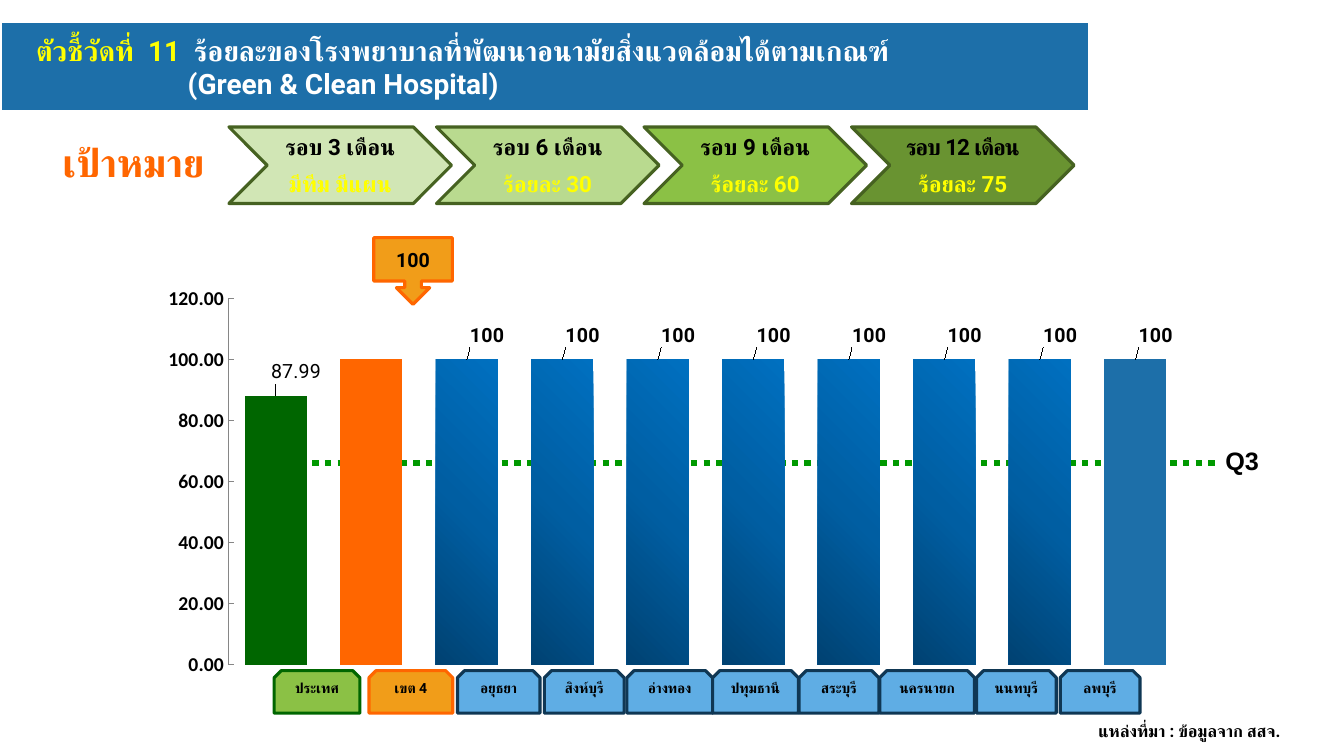
from dataclasses import dataclass

from lxml import etree
from pptx import Presentation
from pptx import util as u
from pptx.chart import data
from pptx.dml.color import RGBColor
from pptx.enum import chart as ch, dml, shapes, text
from pptx.oxml import parse_xml
from pptx.oxml.ns import nsdecls, qn

KIND = shapes.MSO_SHAPE
ALIGN = text.PP_ALIGN
ANCHOR = text.MSO_ANCHOR


@dataclass(frozen=True)
class Theme:
    font: str = "Roboto"
    plain: str = "Arial"
    axis: str = "Calibri"
    black: str = "000000"
    white: str = "FFFFFF"
    yellow: str = "FFFF00"
    blue: str = "1D6FA9"
    sky: str = "5FADE4"
    navy: str = "0F3754"
    green: str = "006600"
    dots: str = "009900"
    leaf: str = "8BC145"
    moss: str = "466221"
    orange: str = "FF6600"
    amber: str = "F19D19"
    brown: str = "7D5008"
    grey: str = "868686"
    steps: tuple = ("D1E6B5", "B9DA8F", "8BC145", "699331")
    grad: tuple = ("004272", "005EA2", "0070C0")
    goal: int = 28
    head: int = 20
    mark: int = 18
    step: int = 16
    label: int = 14
    note: int = 12
    tag: int = 10


def rgb(code):
    return RGBColor.from_string(code)


def layout(x, y, extra=""):
    """Manual chart layout; extra holds elements placed before x."""
    return parse_xml(
        f'<c:layout {nsdecls("c")}><c:manualLayout>{extra}'
        f'<c:x val="{x}"/><c:y val="{y}"/></c:manualLayout></c:layout>')


class Board:
    def __init__(self, slide, theme):
        self.slide, self.theme = slide, theme

    def font(self, font, size, color, bold=True, name=None):
        font.size, font.bold = u.Pt(size), bold
        font.name = name or self.theme.font
        font.color.rgb = rgb(color)

    def fill_text(self, shape, rows, size, align=ALIGN.CENTER,
                  anchor=ANCHOR.MIDDLE, wrap=True, name=None):
        """Each row is a list of (text, colour) runs."""
        frame = shape.text_frame
        frame.word_wrap, frame.vertical_anchor = wrap, anchor
        for i, row in enumerate(rows):
            para = frame.add_paragraph() if i else frame.paragraphs[0]
            para.alignment = align
            for words, color in row:
                run = para.add_run()
                run.text = words
                self.font(run.font, size, color, name=name)
                face = etree.SubElement(run.font._element, qn("a:cs"))
                face.set("typeface", name or self.theme.font)
        return frame

    def paint(self, shape, fill, line, width=2.25):
        shape.fill.solid()
        shape.fill.fore_color.rgb = rgb(fill)
        shape.line.color.rgb = rgb(line)
        shape.line.width = u.Pt(width)

    def title(self, box, rows):
        t, shape = self.theme, self.slide.shapes.title
        shape.left, shape.top, shape.width, shape.height = map(u.Cm, box)
        shape._element.spPr.append(parse_xml(
            f'<a:prstGeom {nsdecls("a")} prst="homePlate"><a:avLst/></a:prstGeom>'))
        self.paint(shape, t.blue, t.white, 1.5)
        frame = self.fill_text(shape, rows, t.head, ALIGN.LEFT)
        frame.auto_size = text.MSO_AUTO_SIZE.NONE
        frame.margin_left = u.Cm(0.88)
        frame.paragraphs[1]._p.get_or_add_pPr().set("marL", str(u.Cm(3.82)))

    def shape(self, kind, box, fill, line, rows, size, anchor=ANCHOR.MIDDLE):
        shape = self.slide.shapes.add_shape(kind, *map(u.Cm, box))
        shape.shadow.inherit = False
        self.paint(shape, fill, line)
        return self.fill_text(shape, rows, size, anchor=anchor)

    def text(self, box, words, size, color, align=ALIGN.LEFT, **style):
        shape = self.slide.shapes.add_textbox(*map(u.Cm, box))
        return self.fill_text(shape, [[(words, color)]], size, align,
                              ANCHOR.TOP, **style)

    def dots(self, left, right, y):
        line = self.slide.shapes.add_connector(
            shapes.MSO_CONNECTOR.STRAIGHT, *map(u.Cm, (left, y, right, y)))
        line.line.color.rgb = rgb(self.theme.dots)
        line.line.width = u.Pt(4.5)
        line.line.dash_style = dml.MSO_LINE.ROUND_DOT
        etree.SubElement(line._element.spPr, qn("a:effectLst"))

    def chart(self, box, vals):
        t = self.theme
        table = data.CategoryChartData(number_format="0")
        table.categories = [str(i + 1) for i in range(len(vals))]
        table.add_series("Series 1", vals)
        chart = self.slide.shapes.add_chart(
            ch.XL_CHART_TYPE.COLUMN_CLUSTERED, *map(u.Cm, box), table).chart
        chart.has_legend = chart.has_title = False
        self.font(chart.font, t.mark, t.black, False, t.axis)
        chart.category_axis.visible = False
        axis = chart.value_axis
        axis.has_major_gridlines = False
        axis.minimum_scale, axis.maximum_scale, axis.major_unit = 0, 120, 20
        axis.major_tick_mark = ch.XL_TICK_MARK.INSIDE
        axis.format.line.color.rgb = rgb(t.grey)
        axis.tick_labels.number_format = "0.00"
        axis.tick_labels.number_format_is_linked = False
        self.font(axis.tick_labels.font, t.label, t.black, name=t.axis)
        area = chart._chartSpace.chart.plotArea
        for old in area.findall(qn("c:layout")):
            area.remove(old)
        inner = layout(0.059, 0.029, '<c:layoutTarget val="inner"/>'
                       '<c:xMode val="edge"/><c:yMode val="edge"/>')
        for side, size in (("w", 0.941), ("h", 0.939)):
            etree.SubElement(inner[0], qn(f"c:{side}")).set("val", str(size))
        area.insert(0, inner)
        plot = chart.plots[0]
        plot.gap_width, plot.vary_by_categories = 54, False
        self.bars(plot.series[0], len(vals))

    def bars(self, series, count):
        """Colour the columns and set their labels beside the column tops."""
        t = self.theme
        series.format.fill.solid()
        series.format.fill.fore_color.rgb = rgb(t.blue)
        for i in range(count):
            point = series.points[i]
            if i < 2:
                point.format.fill.solid()
                point.format.fill.fore_color.rgb = rgb((t.green, t.orange)[i])
            elif i < count - 1:
                point.format.fill.background()
            label = point.data_label
            if i == 0:
                label.text_frame.text = "87.99"
                run = label.text_frame.paragraphs[0].runs[0]
                self.font(run.font, t.label, t.black, False)
            else:
                self.font(label.font, t.label, t.black)
            label.position = ch.XL_LABEL_POSITION.OUTSIDE_END
        stops = "".join(
            f'<a:gs pos="{i * 50000}"><a:srgbClr val="{c}"/></a:gs>'
            for i, c in enumerate(t.grad))
        for blank in series._element.xpath("c:dPt/c:spPr/a:noFill"):
            blank.getparent().replace(blank, parse_xml(
                f'<a:gradFill {nsdecls("a")}><a:gsLst>{stops}</a:gsLst>'
                '<a:path path="circle"><a:fillToRect t="100000" r="100000"/>'
                '</a:path></a:gradFill>'))
        for i, label in enumerate(series._element.xpath("c:dLbls/c:dLbl")):
            if i == 1:
                for part in label[1:]:
                    label.remove(part)
                etree.SubElement(label, qn("c:delete")).set("val", "1")
            else:
                for old in label.findall(qn("c:layout")):
                    label.remove(old)
                label.insert(1, layout(0.02, -0.02))


def main():
    deck = Presentation()
    deck.slide_width, deck.slide_height = u.Cm(33.87), u.Cm(19.05)
    t = Theme()
    board = Board(deck.slides.add_slide(deck.slide_layouts[5]), t)

    board.title((0.03, 0.56, 27.41, 2.24), [
        [("ตัวชี้วัดที่  11  ", t.yellow),
         ("ร้อยละของโรงพยาบาลที่พัฒนาอนามัยสิ่งแวดล้อมได้ตามเกณฑ์", t.white)],
        [("(Green & Clean Hospital)", t.white)]])
    board.dots(6.6, 30.61, 11.66)
    board.text((27.43, 18.03, 5.82, 0.76), "แหล่งที่มา : ข้อมูลจาก สสจ.",
               t.note, t.black, wrap=False)
    board.chart((4.24, 7.21, 25.58, 9.86), [88] + [100] * 9)
    board.text((30.63, 11.1, 1.65, 1.02), "Q3", t.mark, t.black, name=t.plain)

    goal = board.text((1.04, 3.35, 4.65, 1.45), "เป้าหมาย", t.goal, t.orange,
                      ALIGN.CENTER, wrap=False)
    goal.paragraphs[0].runs[0].font._element.insert(0, parse_xml(
        f'<a:ln {nsdecls("a")} w="{u.Pt(0.71)}"><a:solidFill>'
        f'<a:srgbClr val="{t.brown}"/></a:solidFill></a:ln>'))

    aims = ("มีทีม มีแผน", "ร้อยละ 30", "ร้อยละ 60", "ร้อยละ 75")
    for i, (aim, fill) in enumerate(zip(aims, t.steps)):
        frame = board.shape(
            KIND.CHEVRON, (5.77 + 5.23 * i, 3.2, 5.61, 1.93), fill, t.moss,
            [[(f"รอบ {3 * i + 3} เดือน", t.black)], [(aim, t.yellow)]], t.step)
        frame.paragraphs[1].space_before = u.Pt(7)
    frame.paragraphs[0].runs[0].font._element.set("spc", "-80")

    board.shape(KIND.DOWN_ARROW_CALLOUT, (9.42, 5.99, 1.98, 1.68),
                t.amber, t.orange, [[("100", t.black)]], t.label)

    tags = (("ประเทศ", 6.91, 2.16), ("เขต 4", 9.3, 2.11), ("อยุธยา", 11.53, 2.08),
            ("สิงห์บุรี", 13.72, 2.01), ("อ่างทอง", 15.8, 2.16),
            ("ปทุมธานี", 17.96, 2.16), ("สระบุรี", 20.14, 2.01),
            ("นครนายก", 22.17, 2.39), ("นนทบุรี", 24.61, 2.01),
            ("ลพบุรี", 26.72, 2.01))
    looks = [(t.leaf, t.green), (t.amber, t.orange)] + [(t.sky, t.navy)] * 8
    for (name, left, width), look in zip(tags, looks):
        board.shape(KIND.SNIP_2_SAME_RECTANGLE, (left, 16.9, width, 1.07), *look,
                    [[(name, t.black)]], t.tag, ANCHOR.TOP)
    deck.save("out.pptx")


if __name__ == "__main__":
    main()
